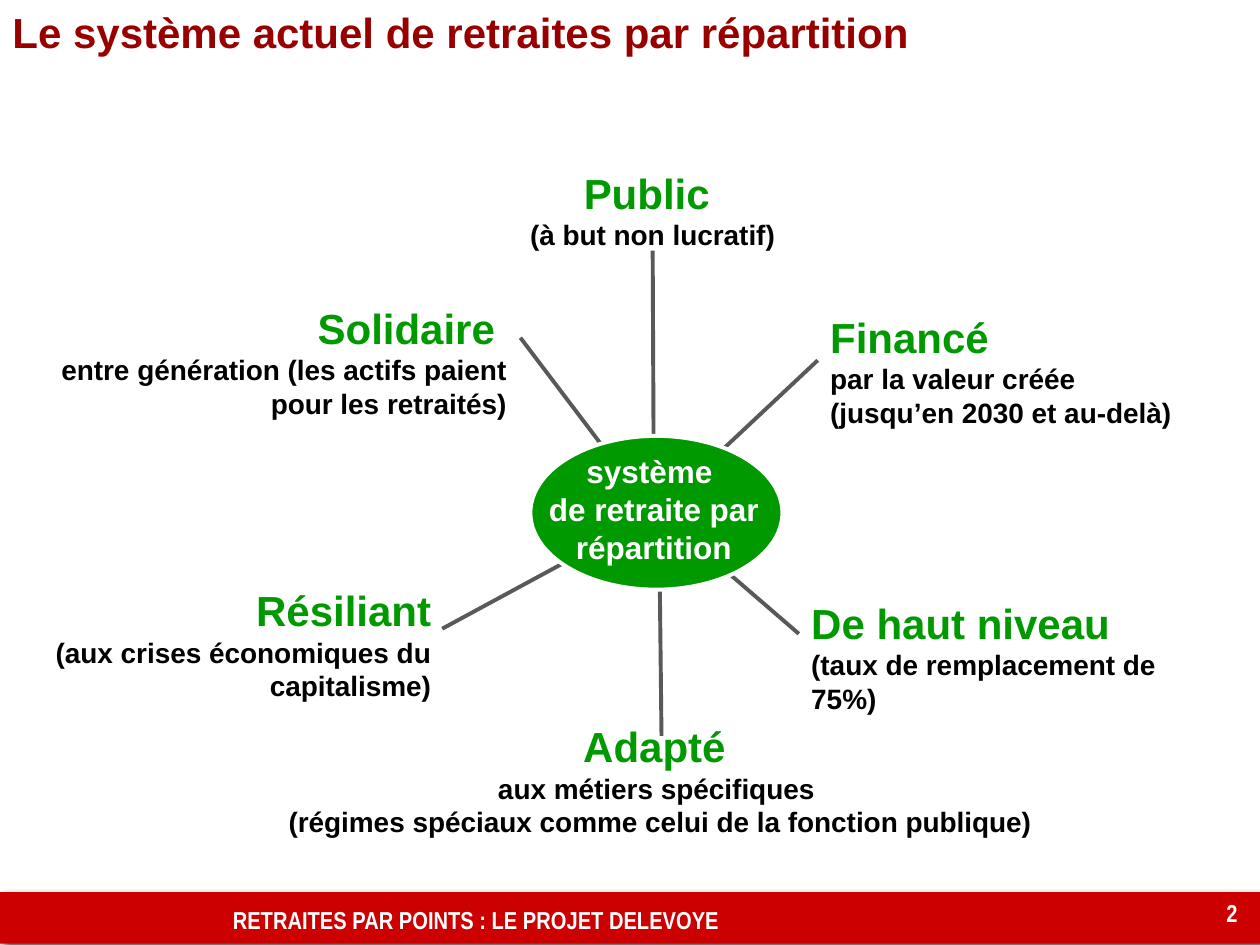
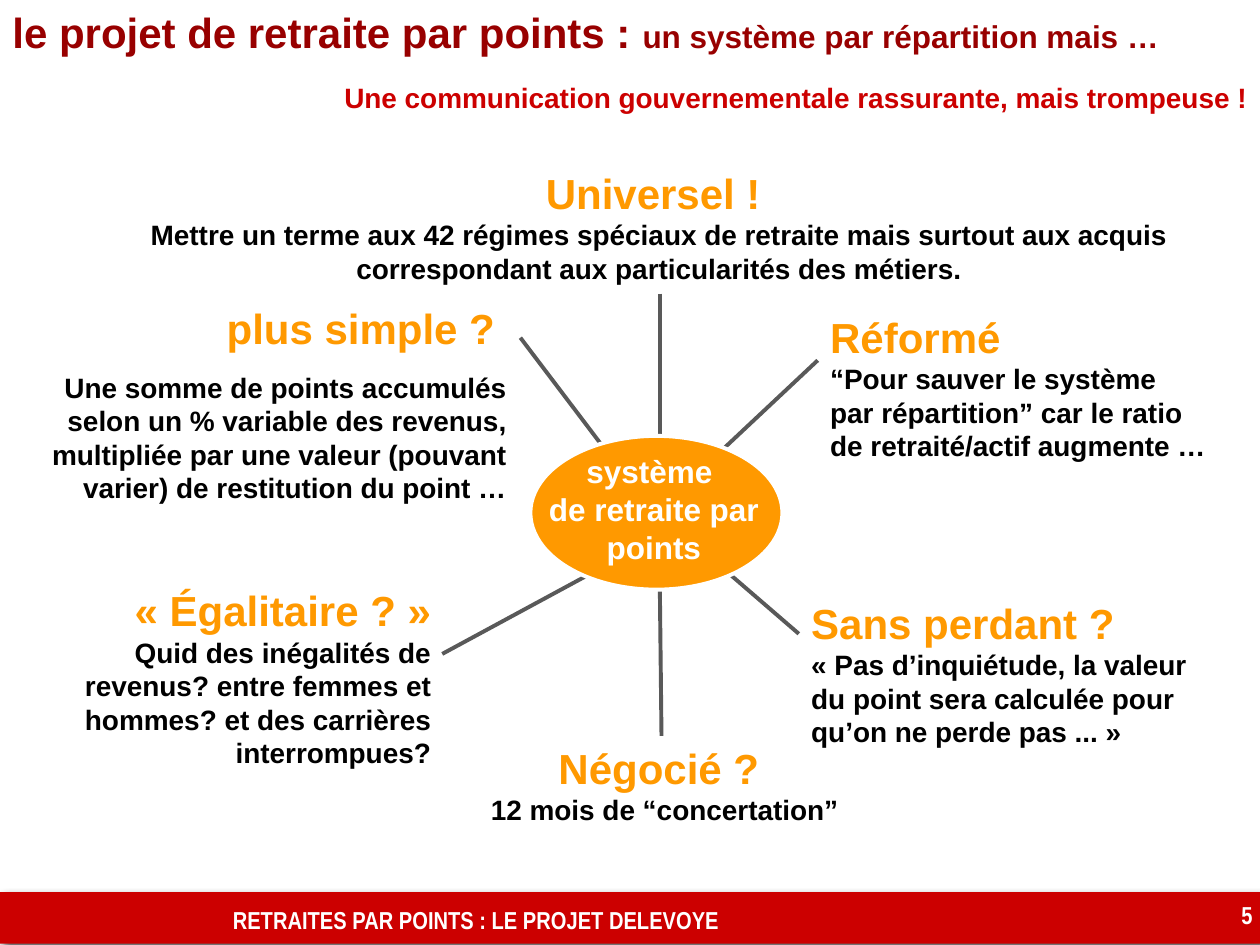
from dataclasses import dataclass

from lxml.etree import SubElement
from pptx import Presentation
from pptx.dml.color import RGBColor
from pptx.enum.shapes import MSO_CONNECTOR as Connector, MSO_SHAPE as Shape
from pptx.enum.text import PP_ALIGN as Align
from pptx.oxml.ns import qn
from pptx.util import Pt

PX = 9144


@dataclass(frozen=True)
class Theme:
    title: str = "980000"
    red: str = "CC0000"
    green: str = "009900"
    orange: str = "FF9900"
    spoke: str = "595959"
    black: str = "000000"
    white: str = "FFFFFF"
    face: str = "Arial"
    narrow: str = "Arial Narrow"
    heading_size: int = 24
    hub_size: int = 18
    body_size: int = 16
    footer_size: int = 14
    line_width: float = 2.25


THEME = Theme()
FOOTER = "RETRAITES PAR POINTS : LE PROJET DELEVOYE"

LEFT_TOP = (-1, 230, 413, 76)
RIGHT_TOP = (649, 237, 319, 98)
RIGHT_BOTTOM = (634, 464, 350, 76)
HUB = (421, 346, 200, 122)
HUB_TEXT = (421, 349, 196, 104)

SHARED_SPOKES = [
    (516, 404, 413, 268),
    (520, 407, 649, 286),
    (523, 405, 525, 584),
    (525, 409, 634, 503),
]


def px(*lengths):
    return [length * PX for length in lengths]


def apply_format(target, values):
    for attribute, value in values.items():
        setattr(target, attribute, value)


def rgb(color):
    return RGBColor.from_string(color)


def style(size, color, face=THEME.face):
    return size, color, face


def paint(target, color):
    target.solid()
    target.fore_color.rgb = rgb(color)


def add_text(slide, box, paragraphs, align=Align.LEFT, inset=(10, 10), gap=0):
    frame = slide.shapes.add_textbox(*px(*box)).text_frame
    side, top = px(*inset)
    apply_format(frame, {
        "word_wrap": True,
        "margin_left": side, "margin_right": side,
        "margin_top": top, "margin_bottom": top,
    })
    for index, runs in enumerate(paragraphs):
        paragraph = frame.add_paragraph() if index else frame.paragraphs[0]
        paragraph.alignment = align
        if index and gap:
            paragraph.space_before = Pt(gap)
        for words, (size, color, face) in runs:
            run = paragraph.add_run()
            run.text = words
            apply_format(run.font, {"name": face, "size": Pt(size), "bold": True})
            run.font.color.rgb = rgb(color)


def add_spoke(slide, ends):
    spoke = slide.shapes.add_connector(Connector.STRAIGHT, *px(*ends))
    spoke.line.width = Pt(THEME.line_width)
    paint(spoke.line.fill, THEME.spoke)
    SubElement(spoke._element.spPr, qn("a:effectLst"))


def add_band_shadow(band):
    effects = band._element.spPr.find(qn("a:effectLst"))
    shadow = SubElement(effects, qn("a:outerShdw"), blurRad=str(Pt(4.5)),
                        dist=str(Pt(3)), dir=str(46 * 60000), rotWithShape="0")
    color = SubElement(shadow, qn("a:srgbClr"), val=THEME.black)
    SubElement(color, qn("a:alpha"), val="62000")


def add_footer(slide, number, number_box):
    band = slide.shapes.add_shape(Shape.RECTANGLE, *px(0, 708, 1000, 41))
    band.shadow.inherit = False
    paint(band.fill, THEME.red)
    band.line.fill.background()
    add_band_shadow(band)
    footer_style = style(THEME.footer_size, THEME.white, THEME.narrow)
    add_text(slide, (175, 708, 503, 33), [[(FOOTER, footer_style)]])
    add_text(slide, number_box, [[(number, footer_style)]], Align.RIGHT, (10, 5))


def add_title(slide, title, detail=""):
    runs = [(title, style(THEME.heading_size, THEME.title))]
    if detail:
        runs.append((detail, style(THEME.hub_size, THEME.title)))
    add_text(slide, (0, 0, 1038, 50), [runs], inset=(10, 5))


def add_quality(slide, accent, heading, details, box, align, **layout):
    paragraphs = [[(heading, style(THEME.heading_size, accent))]]
    paragraphs += [[(detail, style(THEME.body_size, THEME.black))]
                   for detail in details]
    add_text(slide, box, paragraphs, align, **layout)


def add_hub(slide, accent, lines):
    hub = slide.shapes.add_shape(Shape.OVAL, *px(*HUB))
    hub.shadow.inherit = False
    paint(hub.fill, accent)
    hub.line.width = Pt(THEME.line_width)
    paint(hub.line.fill, THEME.white)
    hub_style = style(THEME.hub_size, THEME.white)
    add_text(slide, HUB_TEXT, [[(line, hub_style)] for line in lines], Align.CENTER)


def add_wheel(slide, accent, own_spokes, qualities, hub_lines):
    for ends in SHARED_SPOKES + own_spokes:
        add_spoke(slide, ends)
    for heading, details, box, align, layout in qualities:
        add_quality(slide, accent, heading, details, box, align, **layout)
    add_hub(slide, accent, hub_lines)


def add_current_system(slide):
    add_footer(slide, "2", (955, 708, 37, 50))
    add_title(slide, "Le système actuel de retraites par répartition")
    qualities = [
        ("Public ", ["(à but non lucratif)"],
         (420, 133, 196, 66), Align.CENTER, {"inset": (0, 0)}),
        ("De haut niveau", ["(taux de remplacement de 75%)"],
         RIGHT_BOTTOM, Align.LEFT, {}),
        ("Financé", ["par la valeur créée", "(jusqu’en 2030 et au-delà)"],
         RIGHT_TOP, Align.LEFT, {}),
        ("Résiliant", ["(aux crises économiques du capitalisme)"],
         (33, 454, 319, 91), Align.RIGHT, {}),
        ("Adapté ", ["aux métiers spécifiques ",
                     "(régimes spéciaux comme celui de la fonction publique)"],
         (214, 562, 620, 72), Align.CENTER, {}),
        ("Solidaire ", ["entre génération (les actifs paient pour les retraités)"],
         LEFT_TOP, Align.RIGHT, {}),
    ]
    add_wheel(slide, THEME.green, [(521, 407, 351, 499), (518, 199, 519, 408)],
              qualities, ["système ", "de retraite par répartition"])


def add_points_project(slide):
    add_footer(slide, "5", (958, 709, 46, 50))
    add_title(slide, "le projet de retraite par points : ",
              "un système par répartition mais …")
    qualities = [
        ("Universel ! ",
         ["Mettre un terme aux 42 régimes spéciaux de retraite mais surtout "
          "aux acquis correspondant aux particularités des métiers."],
         (89, 133, 868, 66), Align.CENTER, {"inset": (0, 0)}),
        ("Sans perdant ?",
         ["« Pas d’inquiétude, la valeur du point sera calculée pour "
          "qu’on ne perde pas ... »"],
         RIGHT_BOTTOM, Align.LEFT, {}),
        ("Réformé",
         ["“Pour sauver le système par répartition” car le ratio "
          "de retraité/actif augmente …"],
         RIGHT_TOP, Align.LEFT, {}),
        ("« Égalitaire ? »",
         ["Quid des inégalités de revenus? entre femmes et hommes? "
          "et des carrières interrompues?"],
         (2, 454, 350, 131), Align.RIGHT, {}),
        ("Négocié ? ", ["12 mois de “concertation”"],
         (368, 579, 319, 72), Align.CENTER, {}),
        ("plus simple ? ",
         ["Une somme de points accumulés selon un % variable des revenus, "
          "multipliée par une valeur (pouvant varier) de restitution du point …"],
         LEFT_TOP, Align.RIGHT, {"gap": 10}),
    ]
    add_wheel(slide, THEME.orange, [(521, 427, 351, 519), (524, 233, 524, 396)],
              qualities, ["système ", "de retraite par points"])
    warning = "Une communication gouvernementale rassurante, mais trompeuse !"
    add_text(slide, (100, 59, 900, 37),
             [[(warning, style(THEME.body_size, THEME.red))]], Align.RIGHT, (10, 5))


def main():
    deck = Presentation()
    width, height = px(1000, 750)
    apply_format(deck, {"slide_width": width, "slide_height": height})
    for build in (add_current_system, add_points_project):
        build(deck.slides.add_slide(deck.slide_layouts[6]))
    deck.save("out.pptx")


if __name__ == "__main__":
    main()
